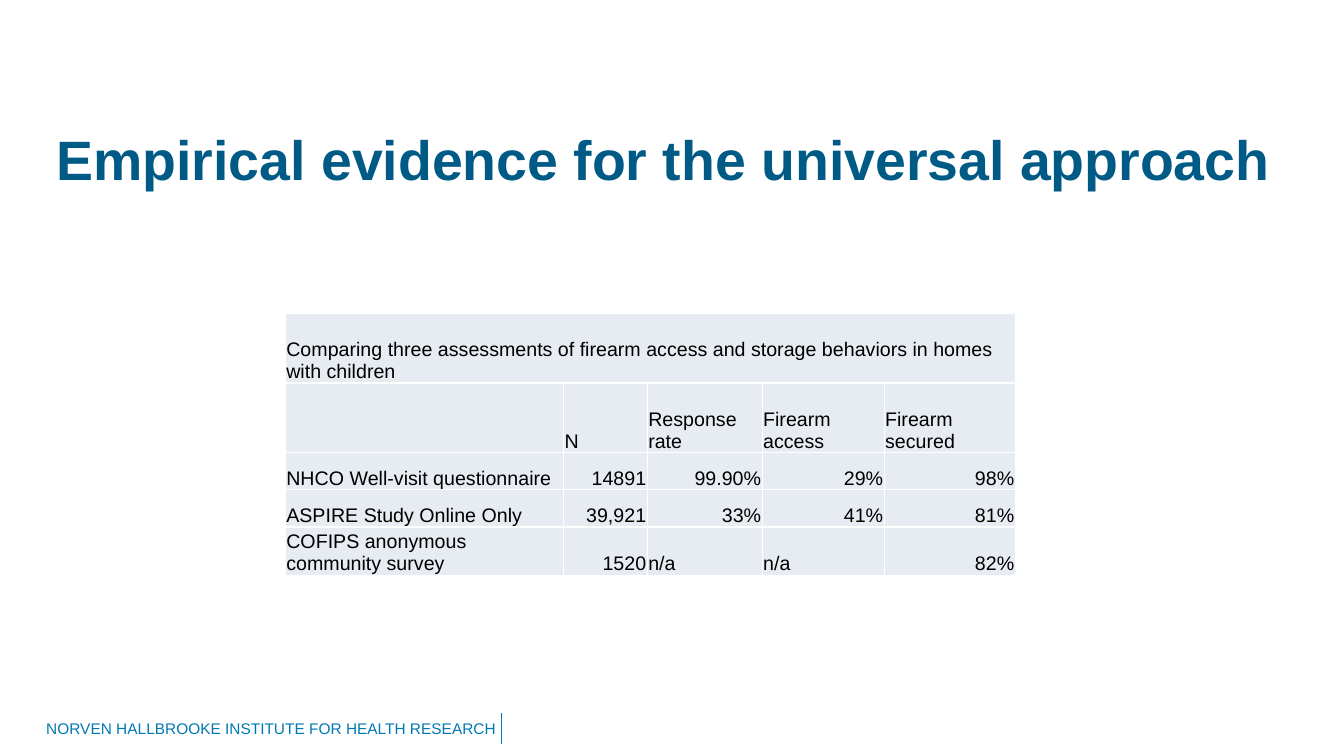
"""Build a slide with a table comparing three firearm storage assessments."""
import pptx
import pptx.util
import pptx.dml.color
import pptx.enum.shapes
import pptx.enum.text
import pptx.oxml
import pptx.oxml.ns
import lxml.etree

Inches, Pt = pptx.util.Inches, pptx.util.Pt
RGBColor = pptx.dml.color.RGBColor
ALIGN, ANCHOR = pptx.enum.text.PP_ALIGN, pptx.enum.text.MSO_ANCHOR
qn = pptx.oxml.ns.qn

TITLE = "Empirical evidence for the universal approach"
FOOTER = "NORVEN HALLBROOKE INSTITUTE FOR HEALTH RESEARCH"
CAPTION = ("Comparing three assessments of firearm access and storage "
           "behaviors in homes with children")
ROWS = [
    (CAPTION, "", "", "", ""),
    ("", "N", "Response rate", "Firearm access", "Firearm secured"),
    ("NHCO Well-visit questionnaire", "14891", "99.90%", "29%", "98%"),
    ("ASPIRE Study Online Only", "39,921", "33%", "41%", "81%"),
    ("COFIPS anonymous community survey", "1520", "n/a", "n/a", "82%"),
]
COL_WIDTHS = (2.76, 0.83, 1.14, 1.21, 1.3)
HEAD_ROWS, HEAD_HEIGHT, ROW_HEIGHT = 2, 0.69, 0.37
TABLE_LEFT, TABLE_TOP = 2.83, 3.11

FONT = "Arial"
NAVY = RGBColor(0x00, 0x5A, 0x86)
BLUE = RGBColor(0x00, 0x78, 0xB3)
BLACK = RGBColor(0x00, 0x00, 0x00)
WHITE = RGBColor(0xFF, 0xFF, 0xFF)
PALE = RGBColor(0xE7, 0xEC, 0xF2)


def write(tf, text, size, color, bold=False, align=ALIGN.LEFT):
    """Set one formatted paragraph in a text frame."""
    tf.text = text
    p = tf.paragraphs[0]
    p.alignment = align
    for font in [p.font] + [r.font for r in p.runs]:
        font.name, font.size, font.bold = FONT, Pt(size), bold
        font.color.rgb = color


def add_borders(cell):
    """Give a cell thin white lines on all four sides."""
    tc_pr = cell._tc.get_or_add_tcPr()
    for i, side in enumerate(("a:lnL", "a:lnR", "a:lnT", "a:lnB")):
        ln = lxml.etree.Element(qn(side), w=str(Pt(1)))
        fill = lxml.etree.SubElement(ln, qn("a:solidFill"))
        lxml.etree.SubElement(fill, qn("a:srgbClr"), val=str(WHITE))
        tc_pr.insert(i, ln)


def add_title(slide):
    """Place and format the title placeholder."""
    sp = slide.shapes.title
    sp.left, sp.top, sp.width, sp.height = map(Inches, (0.46, 0.95, 12.36, 1.24))
    tf = sp.text_frame
    tf.word_wrap = True
    tf.vertical_anchor = ANCHOR.MIDDLE
    tf.auto_size = pptx.enum.text.MSO_AUTO_SIZE.NONE
    write(tf, TITLE, 39.6, NAVY, bold=True)


def add_footer(slide):
    """Add the institute name and the rule to its right."""
    x, top, bottom = map(Inches, (4.97, 7.07, 7.38))
    line = slide.shapes.add_connector(
        pptx.enum.shapes.MSO_CONNECTOR.STRAIGHT, x, top, x, bottom)
    line.line.color.rgb = BLUE
    line.line.width = Pt(0.5)
    lxml.etree.SubElement(line._element.spPr, qn("a:effectLst"))
    box = slide.shapes.add_textbox(*map(Inches, (0.36, 7.08, 4.71, 0.29)))
    box.text_frame.word_wrap = True
    write(box.text_frame, FOOTER, 11, BLUE)


def add_comparison(slide):
    """Add the table, with figures to the right and words to the left."""
    heights = [HEAD_HEIGHT if i < HEAD_ROWS else ROW_HEIGHT
               for i in range(len(ROWS))]
    table = slide.shapes.add_table(
        len(ROWS), len(COL_WIDTHS), Inches(TABLE_LEFT), Inches(TABLE_TOP),
        Inches(sum(COL_WIDTHS)), Inches(sum(heights))).table
    table.first_row = table.horz_banding = False
    for col, width in zip(table.columns, COL_WIDTHS):
        col.width = Inches(width)
    for row, height, texts in zip(table.rows, heights, ROWS):
        row.height = Inches(height)
        for cell, text in zip(row.cells, texts):
            cell.margin_left = cell.margin_right = cell.margin_top = Inches(0.01)
            cell.margin_bottom = 0
            cell.vertical_anchor = ANCHOR.BOTTOM
            cell.fill.solid()
            cell.fill.fore_color.rgb = PALE
            add_borders(cell)
            align = ALIGN.RIGHT if text[:1].isdigit() else ALIGN.LEFT
            write(cell.text_frame, text, 14, BLACK, align=align)
    table.cell(0, 0).merge(table.cell(0, len(COL_WIDTHS) - 1))


def main():
    """Assemble and save the slide."""
    prs = pptx.Presentation()
    prs.slide_width, prs.slide_height = Inches(13.33), Inches(7.5)
    slide = prs.slides.add_slide(prs.slide_layouts[5])
    add_footer(slide)
    add_title(slide)
    add_comparison(slide)
    prs.save("out.pptx")


if __name__ == "__main__":
    main()
